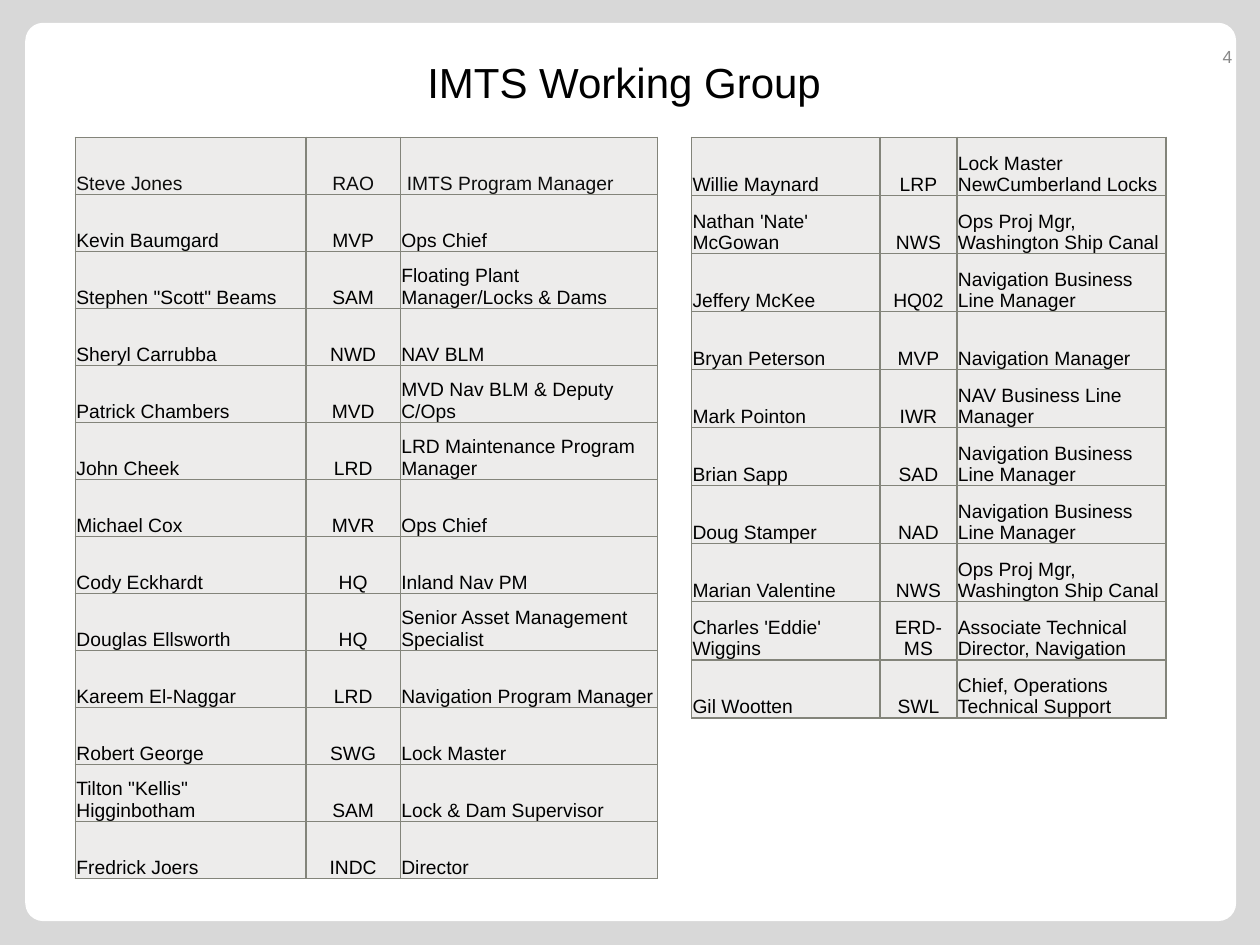
from pptx import Presentation
from pptx.dml.color import RGBColor
from pptx.enum.shapes import MSO_SHAPE
from pptx.enum.text import MSO_ANCHOR, PP_ALIGN
from pptx.oxml import parse_xml
from pptx.oxml.ns import nsdecls
from pptx.util import Cm, Pt

# Content
TITLE = "IMTS Working Group"
PAGE = "4"
LEFT_MEMBERS = [
    ("Steve Jones", "RAO", "IMTS Program Manager"),
    ("Kevin Baumgard", "MVP", "Ops Chief"),
    ('Stephen "Scott" Beams', "SAM", "Floating Plant Manager/Locks & Dams"),
    ("Sheryl Carrubba", "NWD", "NAV BLM"),
    ("Patrick Chambers", "MVD", "MVD Nav BLM & Deputy C/Ops"),
    ("John Cheek", "LRD", "LRD Maintenance Program Manager"),
    ("Michael Cox", "MVR", "Ops Chief"),
    ("Cody Eckhardt", "HQ", "Inland Nav PM"),
    ("Douglas Ellsworth", "HQ", "Senior Asset Management Specialist"),
    ("Kareem El-Naggar", "LRD", "Navigation Program Manager"),
    ("Robert George", "SWG", "Lock Master"),
    ('Tilton "Kellis" Higginbotham', "SAM", "Lock & Dam Supervisor"),
    ("Fredrick Joers", "INDC", "Director"),
]
RIGHT_MEMBERS = [
    ("Willie Maynard", "LRP", "Lock Master NewCumberland Locks"),
    ("Nathan 'Nate' McGowan", "NWS", "Ops Proj Mgr, Washington Ship Canal"),
    ("Jeffery McKee", "HQ02", "Navigation Business Line Manager"),
    ("Bryan Peterson", "MVP", "Navigation Manager"),
    ("Mark Pointon", "IWR", "NAV Business Line Manager"),
    ("Brian Sapp", "SAD", "Navigation Business Line Manager"),
    ("Doug Stamper", "NAD", "Navigation Business Line Manager"),
    ("Marian Valentine", "NWS", "Ops Proj Mgr, Washington Ship Canal"),
    ("Charles 'Eddie' Wiggins", "ERD-MS", "Associate Technical Director, Navigation"),
    ("Gil Wootten", "SWL", "Chief, Operations Technical Support"),
]

# Table layout in cm: members, left edge, column widths, row height
TABLE_TOP = 2.77
TABLES = [
    (LEFT_MEMBERS, 1.52, (4.65, 1.9, 5.18), 1.15),
    (RIGHT_MEMBERS, 13.94, (3.8, 1.55, 4.22), 1.17),
]
ALIGNS = (PP_ALIGN.LEFT, PP_ALIGN.CENTER, PP_ALIGN.LEFT)

THEME = {
    "font": "Arial",
    "title_size": 24, "cell_size": 11, "page_size": 10,
    "back": "D8D8D8", "panel": "FFFFFF", "cell": "EDECEB", "border": "83847A",
    "text": "000000", "lead": "0D0D0D", "page": "898989",
}


def color(name):
    return RGBColor.from_string(THEME[name])


def write(tf, text, size, shade, align):
    p = tf.paragraphs[0]
    p.alignment = align
    r = p.add_run()
    r.text = text
    r.font.name = THEME["font"]
    r.font.size = Pt(THEME[size])
    r.font.color.rgb = color(shade)


def add_borders(cell):
    tc_pr = cell._tc.get_or_add_tcPr()
    for i, side in enumerate(("lnL", "lnR", "lnT", "lnB")):
        tc_pr.insert(i, parse_xml(
            f'<a:{side} {nsdecls("a")} w="{Pt(1)}"><a:solidFill>'
            f'<a:srgbClr val="{THEME["border"]}"/></a:solidFill></a:{side}>'))


def add_members(s, members, left, widths, row_height):
    table = s.shapes.add_table(
        len(members), len(widths), Cm(left), Cm(TABLE_TOP),
        Cm(sum(widths)), Cm(row_height * len(members))).table
    table.first_row = table.horz_banding = False
    for column, width in zip(table.columns, widths):
        column.width = Cm(width)
    for row, member in zip(table.rows, members):
        row.height = Cm(row_height)
        shade = "lead" if member is LEFT_MEMBERS[0] else "text"
        for cell, text, align in zip(row.cells, member, ALIGNS):
            cell.margin_left = cell.margin_right = cell.margin_top = Cm(0.02)
            cell.margin_bottom = 0
            cell.vertical_anchor = MSO_ANCHOR.BOTTOM
            cell.fill.solid()
            cell.fill.fore_color.rgb = color("cell")
            add_borders(cell)
            write(cell.text_frame, text, "cell_size", shade, align)
    return table


prs = Presentation()
prs.slide_width, prs.slide_height = Cm(25.4), Cm(19.05)
s = prs.slides.add_slide(prs.slide_layouts[5])
s.background.fill.solid()
s.background.fill.fore_color.rgb = color("back")

# Title
title = s.shapes.title
title.left, title.top, title.width, title.height = Cm(8.36), Cm(1.02), Cm(8.99), Cm(1.27)
title.text_frame.vertical_anchor = MSO_ANCHOR.MIDDLE
write(title.text_frame, TITLE, "title_size", "text", PP_ALIGN.LEFT)

# White panel behind everything
panel = s.shapes.add_shape(MSO_SHAPE.ROUNDED_RECTANGLE, Cm(0.51), Cm(0.46), Cm(24.41), Cm(18.11))
panel.adjustments[0] = 0.02
panel.shadow.inherit = False
panel.fill.solid()
panel.fill.fore_color.rgb = color("panel")
panel.line.fill.background()
title._element.addprevious(panel._element)

# Page number
tf = s.shapes.add_textbox(Cm(23.06), Cm(0.64), Cm(2.03), Cm(1.02)).text_frame
tf.word_wrap = True
tf.vertical_anchor = MSO_ANCHOR.MIDDLE
write(tf, PAGE, "page_size", "page", PP_ALIGN.RIGHT)

# Member tables, with the lead's role set in slightly
left_table, right_table = [add_members(s, *spec) for spec in TABLES]
left_table.cell(0, 2).margin_left = Cm(0.13)

prs.save("out.pptx")
